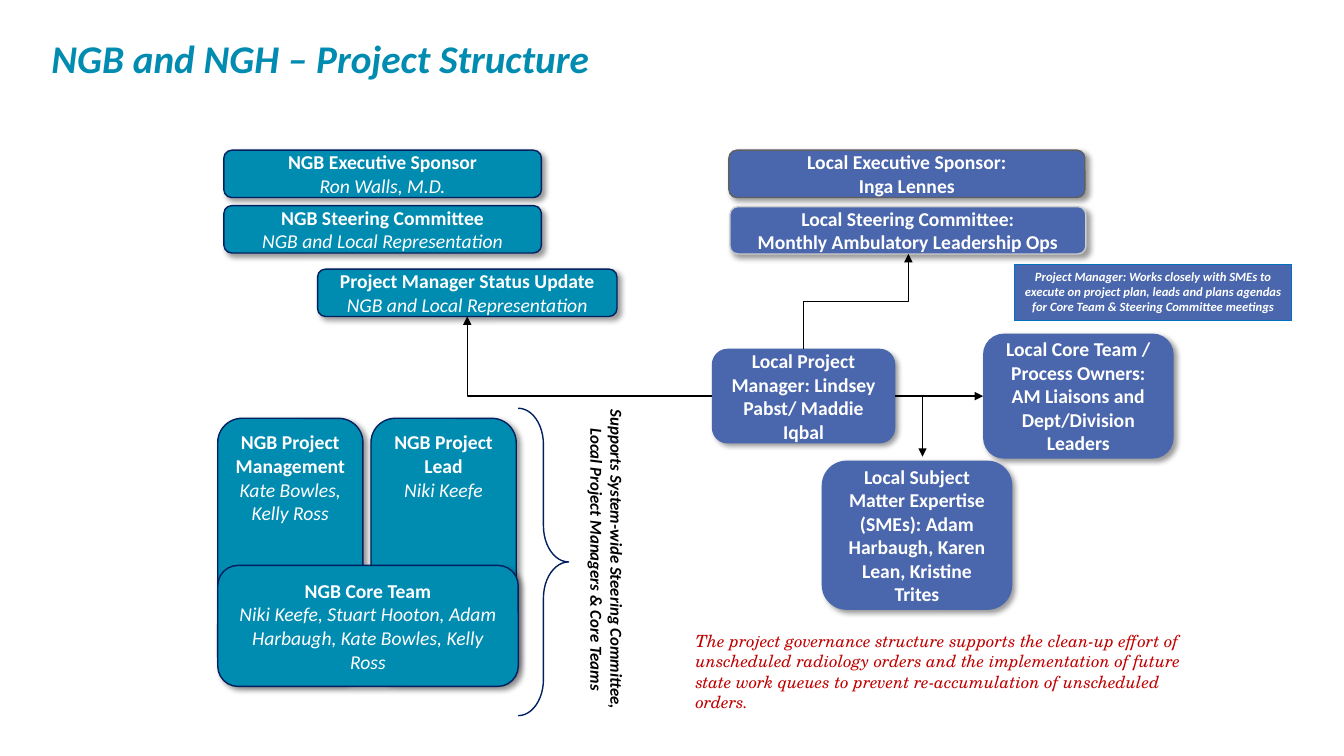
"""Build the project structure slide with its central and local teams."""
from lxml import etree
from pptx import Presentation
from pptx.dml.color import RGBColor
from pptx.enum.shapes import MSO_CONNECTOR, MSO_SHAPE
from pptx.enum.text import MSO_ANCHOR, PP_ALIGN
from pptx.oxml import parse_xml
from pptx.oxml.ns import nsdecls, qn
from pptx.util import Inches, Pt

COLORS = {"teal": "008BB0", "navy": "002060", "blue": "4A66AC", "gray": "606060",
          "silver": "CCCCCC", "note_line": "0070C0", "white": "FFFFFF",
          "black": "000000", "red": "C00000"}
SHADOW = (f'<a:effectLst {nsdecls("a")}><a:outerShdw blurRad="50800" dist="38100" dir="2700000" '
          'algn="tl" rotWithShape="0"><a:srgbClr val="000000"><a:alpha val="40000"/></a:srgbClr>'
          '</a:outerShdw></a:effectLst>')


def style_text(paragraph, size, color, bold, italic, alignment=PP_ALIGN.CENTER, name="Calibri"):
    paragraph.alignment = alignment
    font = paragraph.font
    font.name, font.size, font.bold, font.italic = name, Pt(size), bold, italic
    font.color.rgb = RGBColor.from_string(COLORS[color])


def add_arrow(kind, start, end):
    connector = slide.shapes.add_connector(kind, *[Inches(value) for value in start + end])
    connector.line.color.rgb = RGBColor.from_string(COLORS["black"])
    connector.line.width = Pt(1)
    etree.SubElement(connector.line._get_or_add_ln(), qn("a:tailEnd"), type="triangle")
    etree.SubElement(connector._element.spPr, qn("a:effectLst"))
    return connector


presentation = Presentation()
presentation.slide_width, presentation.slide_height = Inches(13.33), Inches(7.5)
slide = presentation.slides.add_slide(presentation.slide_layouts[5])

title = slide.shapes.title
title.left, title.top, title.width, title.height = [Inches(value) for value in (0.41, 0.21, 10.15, 0.72)]
title.text_frame.text = "NGB and NGH – Project Structure"
title.text_frame.vertical_anchor = MSO_ANCHOR.MIDDLE
style_text(title.text_frame.paragraphs[0], 28, "teal", True, True, PP_ALIGN.LEFT)

TOP, MIDDLE = MSO_ANCHOR.TOP, MSO_ANCHOR.MIDDLE
boxes = [
    ((2.22, 1.49, 3.15, 0.47), "teal", "navy", MIDDLE, "NGB Executive Sponsor", "Ron Walls, M.D."),
    ((2.22, 2.04, 3.15, 0.47), "teal", "navy", MIDDLE, "NGB Steering Committee",
     "NGB and Local Representation"),
    ((3.15, 2.67, 2.97, 0.47), "teal", "navy", MIDDLE, "Project Manager Status Update",
     "NGB and Local Representation"),
    ((3.68, 4.15, 1.44, 2.61), "teal", "navy", TOP, "NGB Project Lead", "Niki Keefe"),
    ((2.16, 4.15, 1.44, 2.61), "teal", "navy", TOP, "NGB Project Management",
     "Kate Bowles, Kelly Ross"),
    ((2.16, 5.61, 2.98, 1.2), "teal", "navy", MIDDLE, "NGB Core Team",
     "Niki Keefe, Stuart Hooton, Adam Harbaugh, Kate Bowles, Kelly Ross"),
    ((7.23, 1.49, 3.53, 0.47), "blue", "gray", MIDDLE, "Local Executive Sponsor:\vInga Lennes", None),
    ((7.24, 2.05, 3.53, 0.47), "blue", "silver", MIDDLE,
     "Local Steering Committee:\vMonthly Ambulatory Leadership Ops", None),
    ((7.06, 3.46, 1.82, 0.94), "blue", None, MIDDLE,
     "Local Project Manager: Lindsey Pabst/ Maddie Iqbal", None),
    ((9.75, 3.31, 1.89, 1.24), "blue", None, MIDDLE,
     "Local Core Team / Process Owners: AM Liaisons and Dept/Division Leaders", None),
    ((8.15, 4.57, 1.89, 1.48), "blue", None, MIDDLE,
     "Local Subject Matter Expertise (SMEs): Adam Harbaugh, Karen Lean, Kristine Trites", None),
]
box_shapes = []
for position, fill, line, anchor, heading, people in boxes:
    shape = slide.shapes.add_shape(MSO_SHAPE.ROUNDED_RECTANGLE, *[Inches(value) for value in position])
    shape.fill.solid()
    shape.fill.fore_color.rgb = RGBColor.from_string(COLORS[fill])
    if line:
        shape.line.color.rgb = RGBColor.from_string(COLORS[line])
        shape.line.width = Pt(1)
    else:
        shape.line.fill.background()
    shape._element.spPr.append(parse_xml(SHADOW))
    frame = shape.text_frame
    frame.word_wrap, frame.vertical_anchor = True, anchor
    frame.text = heading
    style_text(frame.paragraphs[0], 14, "white", True, False)
    if people:
        paragraph = frame.add_paragraph()
        paragraph.text = people
        style_text(paragraph, 14, "white", False, True)
    box_shapes.append(shape)
status_update = box_shapes[2]
local_steering, project_manager, core_team = box_shapes[7:10]

brace = slide.shapes.add_shape(MSO_SHAPE.RIGHT_BRACE, Inches(5.14), Inches(4.05), Inches(0.5), Inches(3.05))
brace.shadow.inherit = False
brace.adjustments[0] = 0.72
brace.fill.background()
brace.line.color.rgb = RGBColor.from_string(COLORS["navy"])
brace.line.width = Pt(1)

note = slide.shapes.add_shape(MSO_SHAPE.RECTANGLE, Inches(10.06), Inches(2.62), Inches(2.75), Inches(0.56))
note.shadow.inherit = False
note.fill.solid()
note.fill.fore_color.rgb = RGBColor.from_string(COLORS["blue"])
note.line.color.rgb = RGBColor.from_string(COLORS["note_line"])
note.line.width = Pt(0.75)
support = slide.shapes.add_textbox(Inches(4.25), Inches(5.3), Inches(3.54), Inches(0.5))
support.rotation = 90
governance = slide.shapes.add_textbox(Inches(6.8), Inches(6.21), Inches(5.02), Inches(0.91))
remarks = [
    (note, 9, "white", True, PP_ALIGN.CENTER, "Calibri",
     "Project Manager: Works closely with SMEs to execute on project plan, leads and plans "
     "agendas for Core Team & Steering Committee meetings"),
    (support, 12, "black", True, PP_ALIGN.CENTER, "Calibri",
     "Supports System-wide Steering Committee, Local Project Managers & Core Teams"),
    (governance, 12, "red", False, PP_ALIGN.LEFT, "TeX Gyre Schola",
     "The project governance structure supports the clean-up effort of unscheduled radiology "
     "orders and the implementation of future state work queues to prevent re-accumulation "
     "of unscheduled orders."),
]
for shape, size, color, bold, alignment, name, text in remarks:
    frame = shape.text_frame
    frame.word_wrap, frame.vertical_anchor = True, TOP
    frame.text = text
    style_text(frame.paragraphs[0], size, color, bold, True, alignment, name)

add_arrow(MSO_CONNECTOR.STRAIGHT, (9.15, 3.92), (9.15, 4.53))

to_core_team = add_arrow(MSO_CONNECTOR.STRAIGHT, (8.88, 3.93), (9.75, 3.93))
to_core_team.begin_connect(project_manager, 3)
to_core_team.end_connect(core_team, 1)

to_status = add_arrow(MSO_CONNECTOR.ELBOW, (7.06, 3.93), (4.63, 3.14))
to_status.begin_connect(project_manager, 1)
to_status.end_connect(status_update, 2)
to_status._element.spPr.find(qn("a:prstGeom")).set("prst", "bentConnector2")

to_steering = add_arrow(MSO_CONNECTOR.ELBOW, (7.97, 3.46), (9.01, 2.52))
to_steering.begin_connect(project_manager, 0)
to_steering.end_connect(local_steering, 2)
to_steering.left, to_steering.top = Inches(8.02), Inches(2.47)
to_steering.width, to_steering.height = Inches(0.94), Inches(1.04)
transform = to_steering._element.spPr.find(qn("a:xfrm"))
for attribute, value in (("rot", "5400000"), ("flipH", "1"), ("flipV", "1")):
    transform.set(attribute, value)

presentation.save("out.pptx")
